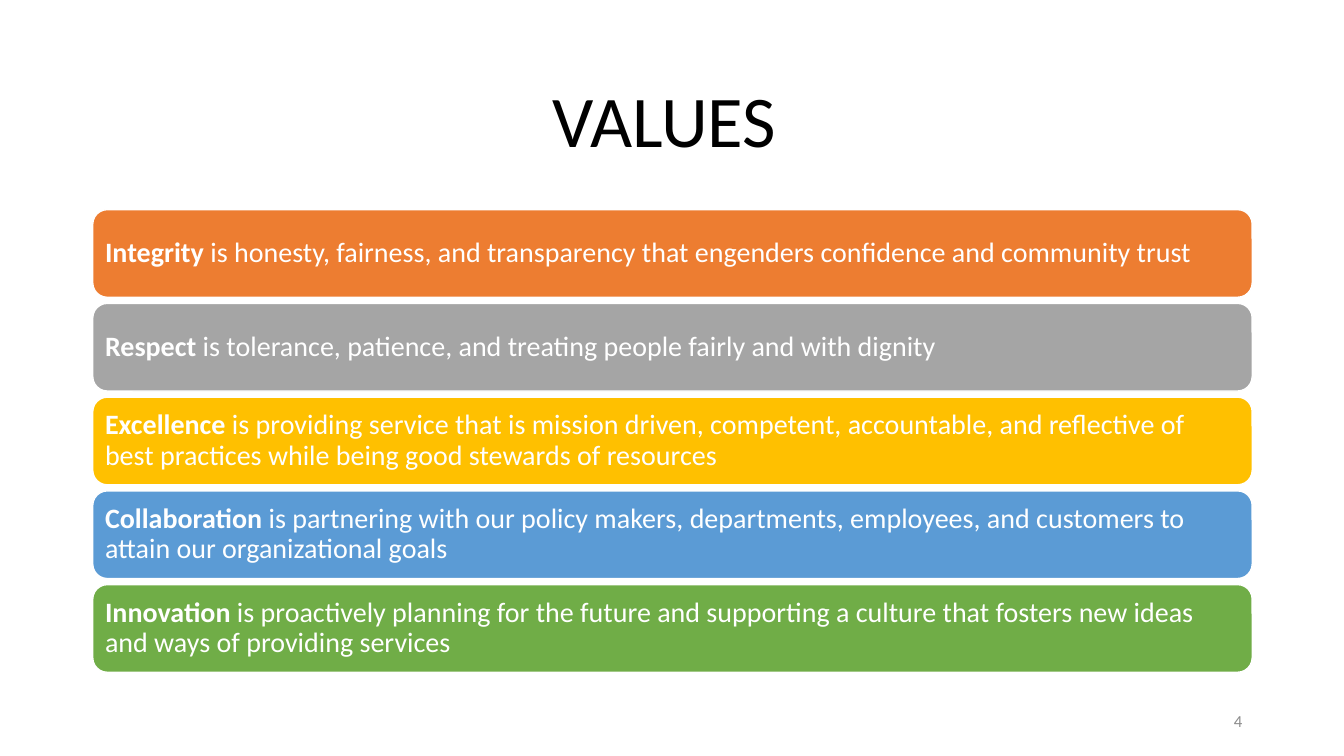
from lxml import etree
from pptx import Presentation
from pptx import util as u
from pptx.dml.color import RGBColor
from pptx.enum import shapes, text
from pptx.oxml.ns import qn

FONT = "Calibri"
COLORS = {
    "title": "000000",
    "white": "FFFFFF",
    "number": "8C8C8C",
    "Integrity": "ED7D31",
    "Respect": "A5A5A5",
    "Excellence": "FFC000",
    "Collaboration": "5B9BD5",
    "Innovation": "70AD47",
}
VALUES = {
    "Integrity": "is honesty, fairness, and transparency that engenders confidence and community trust",
    "Respect": "is tolerance, patience, and treating people fairly and with dignity",
    "Excellence": "is providing service that is mission driven, competent, accountable, "
                  "and reflective of best practices while being good stewards of resources",
    "Collaboration": "is partnering with our policy makers, departments, employees, "
                     "and customers to attain our organizational goals",
    "Innovation": "is proactively planning for the future and supporting a culture "
                  "that fosters new ideas and ways of providing services",
}


def rgb(name):
    return RGBColor.from_string(COLORS[name])


def inches(box):
    return [u.Inches(length) for length in box]


def add_run(paragraph, words, size, color, bold=False):
    run = paragraph.add_run()
    run.text = words
    run.font.name = FONT
    run.font.size = u.Pt(size)
    run.font.bold = bold
    run.font.color.rgb = rgb(color)


def place_title(slide, box):
    title = slide.shapes.title
    title.left, title.top, title.width, title.height = inches(box)
    title.text_frame.vertical_anchor = text.MSO_ANCHOR.MIDDLE
    heading = title.text_frame.paragraphs[0]
    heading.alignment = text.PP_ALIGN.CENTER
    heading.line_spacing = 0.9
    add_run(heading, "VALUES ", 52, "title")


def add_value_bar(slide, box, value, meaning):
    bar = slide.shapes.add_shape(shapes.MSO_SHAPE.ROUNDED_RECTANGLE, *inches(box))
    bar.shadow.inherit = False
    bar.fill.solid()
    bar.fill.fore_color.rgb = rgb(value)
    bar.line.color.rgb = rgb("white")
    bar.line.width = u.Pt(1)
    frame = bar.text_frame
    frame.word_wrap = True
    frame.vertical_anchor = text.MSO_ANCHOR.MIDDLE
    frame.margin_left = frame.margin_right = u.Inches(0.08)
    frame.margin_top = frame.margin_bottom = u.Inches(0.08)
    statement = frame.paragraphs[0]
    statement.alignment = text.PP_ALIGN.LEFT
    statement.line_spacing = 0.9
    add_run(statement, value, 20, "white", bold=True)
    add_run(statement, f" {meaning}", 20, "white")


def add_value_list(slide, box, gap=0.06):
    """Stack one bar per value, equally high, filling the box."""
    left, top, width, height = box
    pitch = (height + gap) / len(VALUES)
    for row, (value, meaning) in enumerate(VALUES.items()):
        add_value_bar(slide, (left, top + row * pitch, width, pitch - gap), value, meaning)


def add_slide_number(slide, box):
    frame = slide.shapes.add_textbox(*inches(box)).text_frame
    frame.word_wrap = True
    frame.vertical_anchor = text.MSO_ANCHOR.MIDDLE
    number = frame.paragraphs[0]
    number.alignment = text.PP_ALIGN.RIGHT
    add_run(number, "4", 12, "number")


def main():
    deck = Presentation()
    deck.slide_width, deck.slide_height = inches((13.33, 7.5))
    slide = deck.slides.add_slide(deck.slide_layouts[5])
    left, width = 0.92, 11.5
    place_title(slide, (left, 0.61, width, 1.24))
    add_value_list(slide, (left, 2.08, width, 4.59))
    add_slide_number(slide, (left + width - 3, 6.95, 3, 0.4))
    deck.save("out.pptx")


if __name__ == "__main__":
    main()
